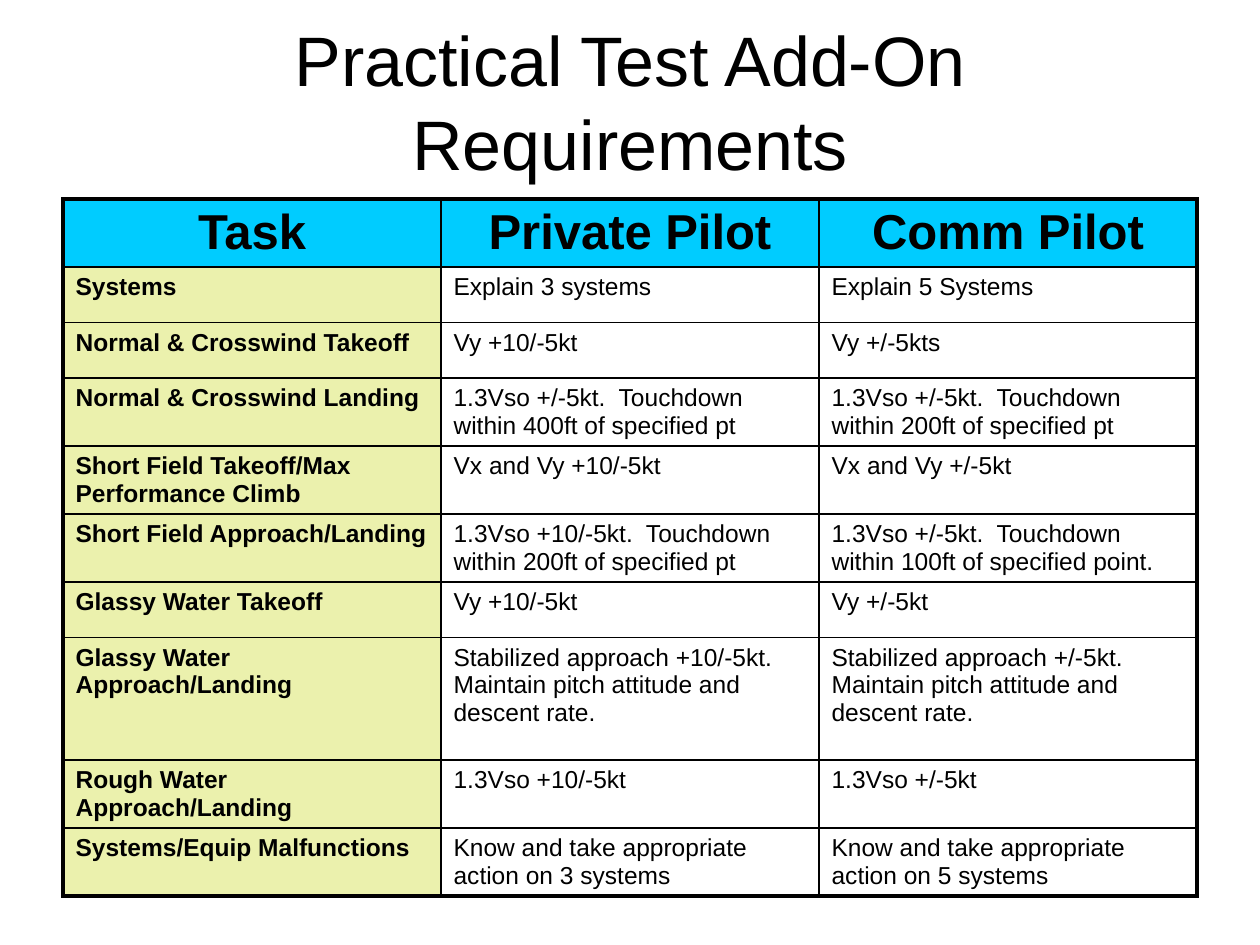
from pptx import Presentation
from pptx.dml.color import RGBColor
from pptx.enum.text import MSO_ANCHOR, MSO_AUTO_SIZE, PP_ALIGN
from pptx.oxml.ns import qn
from pptx.util import Cm, Pt
from lxml.etree import SubElement

# Content
TITLE = "Practical Test Add-On Requirements"
HEADERS = ("Task", "Private Pilot", "Comm Pilot")
TASKS = [
    ("Systems", "Explain 3 systems", "Explain 5 Systems"),
    ("Normal & Crosswind Takeoff", "Vy +10/-5kt", "Vy +/-5kts"),
    ("Normal & Crosswind Landing",
     "1.3Vso +/-5kt.  Touchdown within 400ft of specified pt",
     "1.3Vso +/-5kt.  Touchdown within 200ft of specified pt"),
    ("Short Field Takeoff/Max Performance Climb",
     "Vx and Vy +10/-5kt", "Vx and Vy +/-5kt"),
    ("Short Field Approach/Landing",
     "1.3Vso +10/-5kt.  Touchdown within 200ft of specified pt",
     "1.3Vso +/-5kt.  Touchdown within 100ft of specified point."),
    ("Glassy Water Takeoff", "Vy +10/-5kt", "Vy +/-5kt"),
    ("Glassy Water Approach/Landing",
     "Stabilized approach +10/-5kt.  Maintain pitch attitude and descent rate.",
     "Stabilized approach +/-5kt.  Maintain pitch attitude and descent rate."),
    ("Rough Water Approach/Landing", "1.3Vso +10/-5kt", "1.3Vso +/-5kt"),
    ("Systems/Equip Malfunctions",
     "Know and take appropriate action on 3 systems",
     "Know and take appropriate action on 5 systems"),
]

# Style
COLORS = {"ink": "000000", "header": "00CCFF", "task": "EBF1AD"}
FONT = "Arial"
OUTER_LINE, INNER_LINE = Pt(2.25), Pt(1)
LEFT, WIDTH = Cm(1.27), Cm(22.86)
ONE_LINE, TWO_LINES, FOUR_LINES = Cm(1.12), Cm(1.37), Cm(2.47)
ROW_HEIGHTS = [TWO_LINES, ONE_LINE, ONE_LINE, TWO_LINES, TWO_LINES,
               TWO_LINES, ONE_LINE, FOUR_LINES, TWO_LINES, TWO_LINES]


def write(paragraph, text, size, bold=False, alignment=PP_ALIGN.LEFT):
    paragraph.alignment = alignment
    run = paragraph.add_run()
    run.text = text
    run.font.name = FONT
    run.font.size = Pt(size)
    run.font.bold = bold
    run.font.color.rgb = RGBColor.from_string(COLORS["ink"])


def add_borders(cell, widths):
    properties = cell._tc.get_or_add_tcPr()
    for side, width in zip("LRTB", widths):
        line = SubElement(properties, qn(f"a:ln{side}"), w=str(width))
        fill = SubElement(line, qn("a:solidFill"))
        SubElement(fill, qn("a:srgbClr"), val=COLORS["ink"])


def main():
    presentation = Presentation()
    presentation.slide_width, presentation.slide_height = Cm(25.4), Cm(19.05)
    slide = presentation.slides.add_slide(presentation.slide_layouts[5])

    # Title
    title = slide.shapes.title
    title.left, title.top, title.width, title.height = LEFT, Cm(0.43), WIDTH, Cm(3.18)
    title.text_frame.auto_size = MSO_AUTO_SIZE.NONE
    title.text_frame.word_wrap = True
    title.text_frame.vertical_anchor = MSO_ANCHOR.MIDDLE
    write(title.text_frame.paragraphs[0], TITLE, 40, alignment=PP_ALIGN.CENTER)

    # Table frame
    rows = [HEADERS] + TASKS
    last_row, last_column = len(rows) - 1, len(HEADERS) - 1
    table = slide.shapes.add_table(len(rows), len(HEADERS), LEFT, Cm(4.01),
                                   WIDTH, sum(ROW_HEIGHTS)).table
    table.first_row = table.horz_banding = False
    for row, height in zip(table.rows, ROW_HEIGHTS):
        row.height = height

    # Cells: heavy outer border, thin inner lines
    for r, texts in enumerate(rows):
        for c, text in enumerate(texts):
            cell = table.cell(r, c)
            on_edge = (c == 0, c == last_column, r == 0, r == last_row)
            add_borders(cell, [OUTER_LINE if edge else INNER_LINE for edge in on_edge])
            if r == 0 or c == 0:
                cell.fill.solid()
                cell.fill.fore_color.rgb = RGBColor.from_string(
                    COLORS["header" if r == 0 else "task"])
            else:
                cell.fill.background()
            write(cell.text_frame.paragraphs[0], text, 28 if r == 0 else 14,
                  bold=r == 0 or c == 0,
                  alignment=PP_ALIGN.CENTER if r == 0 else PP_ALIGN.LEFT)

    presentation.save("out.pptx")


if __name__ == "__main__":
    main()
